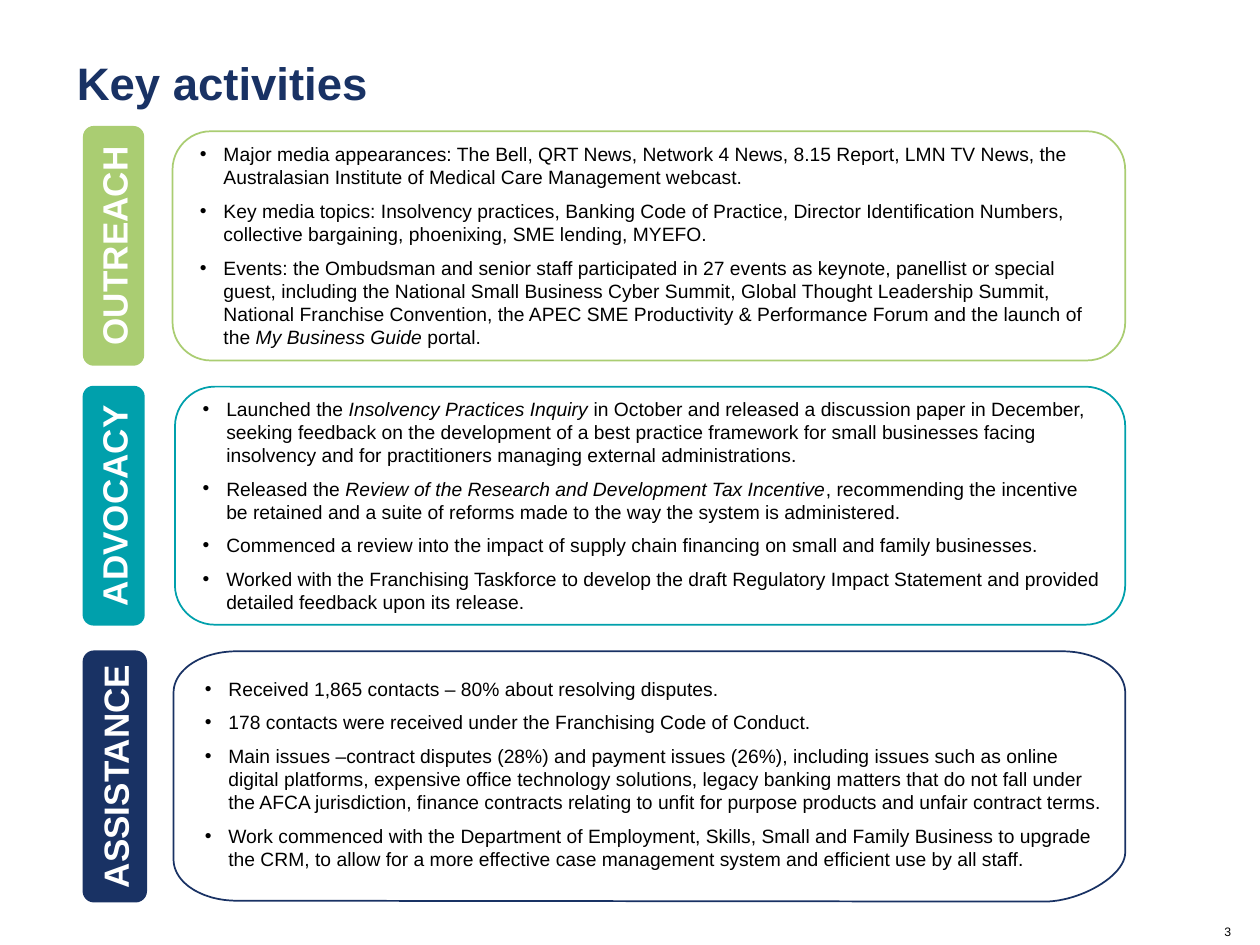
import pptx
import pptx.dml.color
import pptx.enum.shapes
import pptx.enum.text
import pptx.oxml.ns
import pptx.util
from lxml import etree

Pt = pptx.util.Pt
RGB = pptx.dml.color.RGBColor
KIND = pptx.enum.shapes.MSO_SHAPE
ALIGN = pptx.enum.text.PP_ALIGN
ANCHOR = pptx.enum.text.MSO_ANCHOR
FIT = pptx.enum.text.MSO_AUTO_SIZE

GREEN = RGB(0xAA, 0xCD, 0x72)
TEAL = RGB(0x00, 0xA0, 0xAC)
NAVY = RGB(0x19, 0x32, 0x64)
BLACK = RGB(0, 0, 0)
WHITE = RGB(255, 255, 255)

# Asterisks enclose italic words.
OUTREACH = [
    "Major media appearances: The Bell, QRT News, Network 4 News, 8.15 Report, "
    "LMN TV News, the Australasian Institute of Medical Care Management webcast.",
    "Key media topics: Insolvency practices, Banking Code of Practice, Director "
    "Identification Numbers, collective bargaining, phoenixing, SME lending, MYEFO.",
    "Events: the Ombudsman and senior staff participated in 27 events as keynote, "
    "panellist or special guest, including the National Small Business Cyber Summit, "
    "Global Thought Leadership Summit, National Franchise Convention, the APEC SME "
    "Productivity & Performance Forum and the launch of the *My Business Guide* portal.",
]
ADVOCACY = [
    "Launched the *Insolvency Practices Inquiry* in October and released a discussion "
    "paper in December, seeking feedback on the development of a best practice "
    "framework for small businesses facing insolvency and for practitioners managing "
    "external administrations.",
    "Released the *Review of the Research and Development Tax Incentive*, recommending "
    "the incentive be retained and a suite of reforms made to the way the system is "
    "administered.",
    "Commenced a review into the impact of supply chain financing on small and family "
    "businesses.",
    "Worked with the Franchising Taskforce to develop the draft Regulatory Impact "
    "Statement and provided detailed feedback upon its release.",
]
ASSISTANCE = [
    "Received 1,865 contacts – 80% about resolving disputes.",
    "178 contacts were received under the Franchising Code of Conduct.",
    "Main issues –contract disputes (28%) and payment issues (26%), including issues "
    "such as online digital platforms, expensive office technology solutions, legacy "
    "banking matters that do not fall under the AFCA jurisdiction, finance contracts "
    "relating to unfit for purpose products and unfair contract terms.",
    "Work commenced with the Department of Employment, Skills, Small and Family "
    "Business to upgrade the CRM, to allow for a more effective case management system "
    "and efficient use by all staff.",
]


def curve(a, b, c, d, steps=24):
    """Points on a cubic Bezier from a to d, without a."""
    for i in range(1, steps + 1):
        t = i / steps
        u = 1 - t
        yield tuple(
            u**3 * p + 3 * u * u * t * q + 3 * u * t * t * r + t**3 * s
            for p, q, r, s in zip(a, b, c, d)
        )


class Deck:
    font = "Arial"

    def __init__(self, slide):
        self.slide = slide
        self.shapes = slide.shapes

    def place(self, shape, box):
        shape.left, shape.top, shape.width, shape.height = map(Pt, box)

    def style(self, para, size, color, bold=False):
        font = para.font
        font.name, font.size, font.bold = self.font, Pt(size), bold
        font.color.rgb = color

    def edge(self, shape, color, fill=None):
        shape.shadow.inherit = False
        shape.line.color.rgb = color
        shape.line.width = Pt(1)
        if fill is None:
            shape.fill.background()
        else:
            shape.fill.solid()
            shape.fill.fore_color.rgb = fill

    def title(self, text, box):
        shape = self.shapes.title
        self.place(shape, box)
        frame = shape.text_frame
        frame.text = text
        frame.auto_size = FIT.NONE
        frame.word_wrap = False
        frame.vertical_anchor = ANCHOR.MIDDLE
        para = frame.paragraphs[0]
        para.alignment = ALIGN.LEFT
        self.style(para, 26, NAVY, True)

    def label(self, text, box, size, color, bold=False, turn=0):
        shape = self.shapes.add_textbox(*map(Pt, box))
        shape.rotation = turn
        frame = shape.text_frame
        frame.text = text
        frame.word_wrap = True
        frame.vertical_anchor = ANCHOR.MIDDLE
        para = frame.paragraphs[0]
        para.alignment = ALIGN.CENTER
        self.style(para, size, color, bold)

    def round(self, box, color, fill=None):
        shape = self.shapes.add_shape(KIND.ROUNDED_RECTANGLE, *map(Pt, box))
        self.edge(shape, color, fill)

    def tab(self, text, box, color):
        """Filled bar with its name reading upwards along its middle."""
        self.round(box, color, color)
        x, y, w, h = box
        high = 32
        self.label(text, (x + w / 2 - h / 2, y + h / 2 - high / 2, h, high),
                   20, WHITE, True, 270)

    def bulge(self, box, color):
        """Panel whose corners are wider than they are high."""
        x, y, w, h = box
        r, b = x + w, y + h
        dots = [(x, y + 23.6)]
        dots += curve(dots[-1], (x, y + 10.5), (x + 16, y), (x + 36, y))
        dots.append((r - 36, y))
        dots += curve(dots[-1], (r - 16, y), (r, y + 10.5), (r, y + 23.6))
        dots.append((r, b - 28))
        dots += curve(dots[-1], (r, b - 14.5), (r - 26, b), (r - 46, b))
        dots.append((x + 36, b - 0.5))
        dots += curve(dots[-1], (x + 16, b - 0.5), (x, b - 11), (x, b - 24))
        start, *rest = [(Pt(p), Pt(q)) for p, q in dots]
        path = self.shapes.build_freeform(*start)
        path.add_line_segments(rest, close=True)
        self.edge(path.convert_to_shape(), color)

    def list(self, slot, items, box):
        shape = self.slide.placeholders[slot]
        self.place(shape, box)
        frame = shape.text_frame
        frame.auto_size = FIT.NONE
        frame.word_wrap = True
        frame.vertical_anchor = ANCHOR.TOP
        for i, item in enumerate(items):
            para = frame.add_paragraph() if i else frame.paragraphs[0]
            para.alignment = ALIGN.LEFT
            para.line_spacing = 1.0
            para.space_before = Pt(0)
            para.space_after = Pt(6 if i < len(items) - 1 else 0)
            self.bullet(para)
            self.style(para, 11, BLACK)
            for j, part in enumerate(item.split("*")):
                run = para.add_run()
                run.text = part
                if j % 2:
                    run.font.italic = True

    def bullet(self, para):
        props = para._p.get_or_add_pPr()
        props.set("marL", str(Pt(13.5)))
        props.set("indent", str(-Pt(13.5)))
        qn = pptx.oxml.ns.qn
        etree.SubElement(props, qn("a:buFont"), typeface=self.font)
        etree.SubElement(props, qn("a:buChar"), char="•")


def main():
    prs = pptx.Presentation()
    prs.slide_width, prs.slide_height = Pt(720), Pt(540)
    deck = Deck(prs.slides.add_slide(prs.slide_layouts[4]))
    spare = deck.slide.placeholders[3].element
    spare.getparent().remove(spare)

    deck.title("Key activities", (36.7, 27.5, 197, 39))
    rows = [
        ("OUTREACH", GREEN, deck.round, (47.9, 72.5, 34, 136),
         (98.6, 75, 544.4, 131), 1, OUTREACH, (107, 77.8, 529, 126)),
        ("ADVOCACY", TEAL, deck.round, (47.7, 221, 34.5, 136),
         (100, 221, 543, 136), 2, ADVOCACY, (108.6, 223.2, 529, 132)),
        ("ASSISTANCE", NAVY, deck.bulge, (47.7, 372.2, 35.8, 143),
         (99.2, 372.2, 543.8, 143), 4, ASSISTANCE, (109.8, 383.2, 529, 119)),
    ]
    for name, color, panel, tab, frame, slot, items, text in rows:
        panel(frame, color)
        deck.tab(name, tab, color)
        deck.list(slot, items, text)
    deck.label("3", (683.3, 524.2, 36.7, 15.8), 7, BLACK)
    prs.save("out.pptx")


if __name__ == "__main__":
    main()
